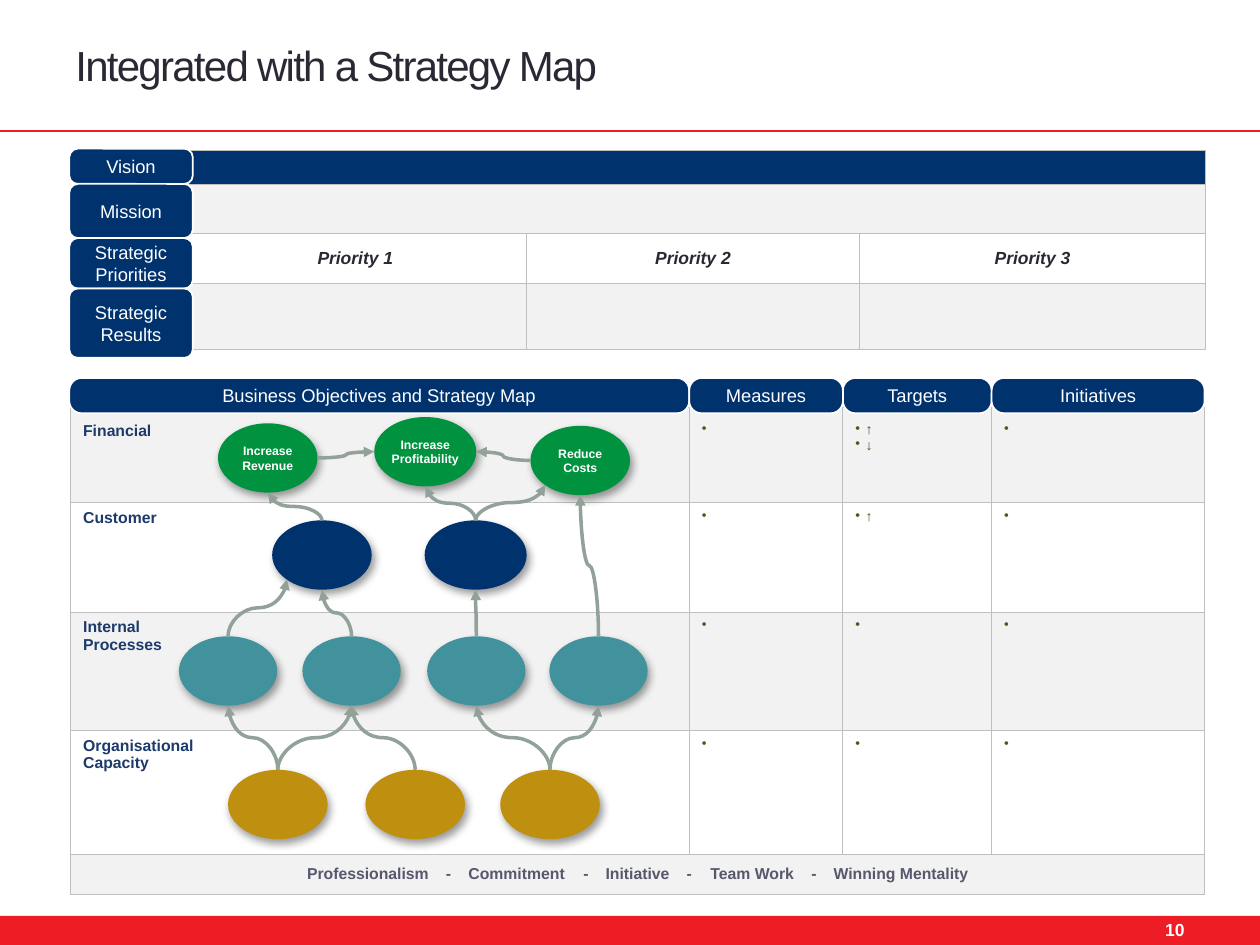
from lxml import etree
from pptx import Presentation
from pptx.dml.color import RGBColor
from pptx.enum.shapes import MSO_CONNECTOR, MSO_SHAPE
from pptx.enum.text import MSO_ANCHOR, PP_ALIGN
from pptx.oxml.ns import qn
from pptx.util import Pt

PX = 9144  # 100 px to the inch
RECT, PILL, OVAL = MSO_SHAPE.RECTANGLE, MSO_SHAPE.ROUNDED_RECTANGLE, MSO_SHAPE.OVAL
CURVE, LINE = MSO_CONNECTOR.CURVE, MSO_CONNECTOR.STRAIGHT
MID = MSO_ANCHOR.MIDDLE
LEFT, CENTER, RIGHT = PP_ALIGN.LEFT, PP_ALIGN.CENTER, PP_ALIGN.RIGHT
FONT = "Arial"
HEX = {
    "red": "EE1C25", "navy": "00326E", "green": "00923F", "teal": "42929D",
    "gold": "BF9010", "white": "FFFFFF", "pale": "F2F2F2", "grid": "BFBFBF",
    "arrow": "93A299", "ink": "292934", "label": "1C3A6A", "mark": "56541E",
    "value": "57576E", "black": "000000",
}


def rgb(name):
    return RGBColor.from_string(HEX[name])


def emu(*sizes):
    return [round(size * PX) for size in sizes]


def sub(node, tag, **attrs):
    child = etree.SubElement(node, qn(tag))
    for key, val in attrs.items():
        child.set(key, str(val))
    return child


def tint(node, name):
    return sub(sub(node, "a:solidFill"), "a:srgbClr", val=HEX[name])


def write(para, text, size, color, bold=False, italic=False, align=LEFT):
    para.alignment = align
    for i, part in enumerate(text.split("\n")):
        if i:
            para.add_line_break()
        run = para.add_run()
        run.text = part
        font = run.font
        font.name, font.size, font.bold, font.italic = FONT, Pt(size), bold, italic
        font.color.rgb = rgb(color)
    return run


def inset(frame, left, top, right, low):
    (frame.margin_left, frame.margin_top,
     frame.margin_right, frame.margin_bottom) = emu(left, top, right, low)


def block(slide, kind, box, fill, edge=None):
    shape = slide.shapes.add_shape(kind, *emu(*box))
    shape.shadow.inherit = False
    shape.fill.solid()
    shape.fill.fore_color.rgb = rgb(fill)
    if edge:
        shape.line.color.rgb = rgb(edge)
        shape.line.width = Pt(1)
    else:
        shape.line.fill.background()
    shape.text_frame.word_wrap = True
    shape.text_frame.vertical_anchor = MID
    return shape


def pill(slide, box, text, adj):
    shape = block(slide, PILL, box, "navy", "white")
    shape.adjustments[0] = adj
    write(shape.text_frame.paragraphs[0], text, 10.5, "white", align=CENTER)


def join(slide, kind, start, end, color, width):
    line = slide.shapes.add_connector(kind, *emu(*start, *end))
    line.line.color.rgb = rgb(color)
    line.line.width = Pt(width)
    sub(line._element.spPr, "a:effectLst")
    return line


def label(slide, box, text, size, color, bold=False, align=LEFT):
    frame = slide.shapes.add_textbox(*emu(*box)).text_frame
    frame.word_wrap = True
    frame.vertical_anchor = MID
    inset(frame, 10, 0, 10, 0)
    return write(frame.paragraphs[0], text, size, color, bold, align=align)


def grid(slide, box, cols, rows, fills):
    table = slide.shapes.add_table(len(rows), len(cols), *emu(*box)).table
    table.first_row = table.horz_banding = False
    for col, size in zip(table.columns, cols):
        col.width = size * PX
    for row, size, fill in zip(table.rows, rows, fills):
        row.height = size * PX
        for cell in row.cells:
            props = cell._tc.get_or_add_tcPr()
            for side in "LRTB":
                tint(sub(props, f"a:ln{side}", w=Pt(0.5)), "grid")
            cell.fill.solid()
            cell.fill.fore_color.rgb = rgb(fill)
    return table


def shrink(cell):
    """Keep an empty cell from stretching its row."""
    sub(cell.text_frame.paragraphs[0]._p, "a:endParaRPr", sz=800)


def bullet(para, text):
    props = para._p.get_or_add_pPr()
    props.set("marL", str(8 * PX))
    props.set("indent", str(-8 * PX))
    sub(props, "a:buChar", char="•")
    write(para, text, 8, "mark")


def frame_bars(slide, box):
    x, y, w, h = box
    block(slide, RECT, (x, y + 727, w, 23), "red")
    join(slide, LINE, (x, y + 104), (x + w, y + 104), "red", 1.5)
    run = label(slide, (x + 50, y + 15, 694, 72), "Integrated with a Strategy Map", 24, "ink")
    run._r.get_or_add_rPr().set("spc", "-100")
    label(slide, (x + 833, y + 727, 117, 22), "10", 10, "white", True, RIGHT)


def outlook(slide, box):
    x, y, w, h = box
    table = grid(slide, (x + 91, y + 1, w - 91, h), (272, 264, 275),
                 (27, 39, 40, 52), ("navy", "pale", "white", "pale"))
    for r in (0, 1, 3):
        for cell in table.rows[r].cells:
            shrink(cell)
    for r in (0, 1):
        table.cell(r, 0).merge(table.cell(r, 2))
    for i, cell in enumerate(table.rows[2].cells):
        cell.vertical_anchor = MID
        write(cell.text_frame.paragraphs[0], f"Priority {i + 1}", 10, "ink", True, True, CENTER)
    # Row names
    top = y
    for text, size in (("Vision", 28), ("Mission", 43),
                       ("Strategic Priorities", 40), ("Strategic Results", 55)):
        pill(slide, (x, top, 98, size), text, round(6.8 / size, 2))
        top += size


def scorecard(slide, box):
    x, y, w, h = box
    cols = (491, 122, 118, 169)
    table = grid(slide, (x, y + 23, w, h - 23), cols, (76, 87, 94, 98, 32),
                 ("pale", "white", "pale", "white", "pale"))
    names = "Financial", "Customer", "Internal\nProcesses", "Organisational\nCapacity"
    goals = {0: "↑↓", 1: "↑"}
    for r, name in enumerate(names):
        for c, cell in enumerate(table.rows[r].cells):
            frame = cell.text_frame
            inset(cell, 10, 5 if r else 12, 10, 5)
            if c == 0:
                write(frame.paragraphs[0], name, 9, "label", True)
                continue
            for i, mark in enumerate(goals.get(r, " ") if c == 2 else " "):
                bullet(frame.add_paragraph() if i else frame.paragraphs[0], mark)
    # Core values, each centred on a tab stop
    foot = table.cell(4, 0)
    for cell in table.rows[4].cells:
        if cell is not foot and not cell._tc is foot._tc:
            shrink(cell)
    foot.merge(table.cell(4, 3))
    foot.vertical_anchor = MID
    para = foot.text_frame.paragraphs[0]
    stops = sub(para._p.get_or_add_pPr(), "a:tabLst")
    for stop in (226, 290, 344, 399, 440, 481, 531, 580, 649):
        sub(stops, "a:tab", pos=stop * PX, algn="ctr")
    values = "Professionalism", "Commitment", "Initiative", "Team Work", "Winning Mentality"
    write(para, "\t" + "\t-\t".join(values), 9, "value", True)
    # Column heads
    left = x - 1
    heads = "Business Objectives and Strategy Map", "Measures", "Targets", "Initiatives"
    for text, size in zip(heads, (cols[0] + 1, *cols[1:])):
        pill(slide, (left, y, size, 28), text, 0.35)
        left += size


def node(slide, box, fill, text):
    shape = block(slide, OVAL, box, fill)
    glow = sub(shape._element.spPr.find(qn("a:effectLst")), "a:outerShdw", blurRad=Pt(5),
               dist=Pt(3), dir=60 * 60000, algn="tl", rotWithShape=0)
    sub(sub(glow, "a:srgbClr", val=HEX["black"]), "a:alpha", val=40000)
    if text:
        inset(shape.text_frame, 0, 0, 0, 0)
        write(shape.text_frame.paragraphs[0], text, 7, "white", True, align=CENTER)


def link(slide, start, end, flat):
    (x1, y1), (x2, y2) = start, end
    if not flat:  # lay the curve on its side, then turn it about its centre
        mx, my, dx, dy = (x1 + x2) / 2, (y1 + y2) / 2, (x1 - x2) / 2, (y1 - y2) / 2
        start, end = (mx - dy, my + dx), (mx + dy, my - dx)
    line = join(slide, CURVE, start, end, "arrow", 2)
    if not flat:
        line._element.spPr.find(qn("a:xfrm")).set("rot", str(270 * 60000))
    sub(line.line._get_or_add_ln(), "a:tailEnd", type="triangle")


def strategy(slide, box):
    x, y, w, h = box
    nodes = {  # left, top, width, fill, text
        "gain": (31, 5, 79, "green", "Increase Revenue"),
        "profit": (155, 0, 81, "green", "Increase Profitability"),
        "cost": (279, 7, 79, "green", "Reduce Costs"),
        "c1": (74, 82, 79, "navy", ""), "c2": (195, 82, 81, "navy", ""),
        "p1": (0, 174, 78, "teal", ""), "p2": (98, 174, 78, "teal", ""),
        "p3": (197, 174, 78, "teal", ""), "p4": (294, 174, 78, "teal", ""),
        "o1": (39, 280, 79, "gold", ""), "o2": (148, 280, 79, "gold", ""),
        "o3": (255, 280, 79, "gold", ""),
    }
    spots = {"top": (0.5, 0), "low": (0.5, 1), "left": (0, 0.5),
             "right": (1, 0.5), "slant": (0.15, 0.85)}

    def at(name, spot):
        left, top, wide = nodes[name][:3]
        fx, fy = spots[spot]
        return x + left + wide * fx, y + top + 55 * fy

    for left, top, wide, fill, text in nodes.values():
        node(slide, (x + left, y + top, wide, 55), fill, text)
    # Rising links
    for tail, head, spot in (
            ("o1", "p1", "low"), ("o1", "p2", "low"), ("o2", "p2", "low"),
            ("o3", "p4", "low"), ("o3", "p3", "low"), ("p4", "cost", "low"),
            ("p3", "c2", "low"), ("p2", "c1", "low"), ("p1", "c1", "slant"),
            ("c1", "gain", "low"), ("c2", "cost", "slant"), ("c2", "profit", "low")):
        link(slide, at(tail, "top"), at(head, spot), False)
    # Level links
    link(slide, at("gain", "right"), at("profit", "left"), True)
    link(slide, at("cost", "left"), at("profit", "right"), True)


def main():
    deck = Presentation()
    deck.slide_width, deck.slide_height = emu(1000, 750)
    slide = deck.slides.add_slide(deck.slide_layouts[6])
    frame_bars(slide, (0, 0, 1000, 750))
    outlook(slide, (55, 118, 902, 158))
    scorecard(slide, (56, 300, 900, 410))
    strategy(slide, (142, 331, 372, 335))
    deck.save("out.pptx")


if __name__ == "__main__":
    main()
